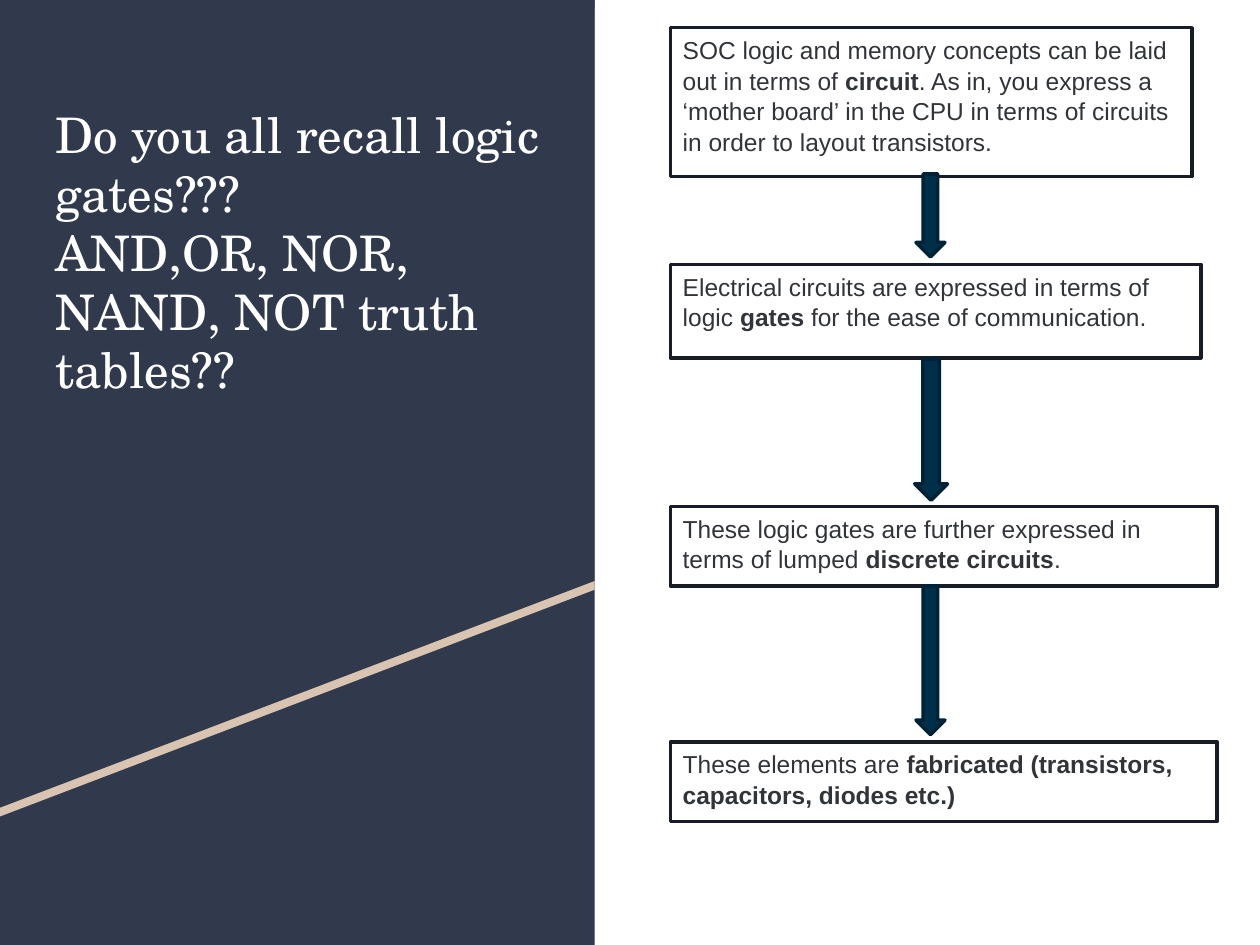
from pptx import Presentation
from pptx.dml.color import RGBColor
from pptx.enum.shapes import MSO_SHAPE as Preset
from pptx.enum.text import MSO_ANCHOR as Anchor, MSO_AUTO_SIZE as AutoSize, PP_ALIGN as Align
from pptx.util import Inches, Pt

COLORS = {
    "navy": "31394D", "sand": "D9C4B1", "white": "FFFFFF", "text": "313539",
    "border": "181C26", "arrow": "002F4A", "arrow_edge": "002236",
}


def color(name):
    return RGBColor.from_string(COLORS[name])


def paint(shape, fill, line=None):
    """Give a shape a flat fill and an optional 2 pt outline, without shadow."""
    shape.shadow.inherit = False
    shape.fill.solid()
    shape.fill.fore_color.rgb = color(fill)
    if line:
        shape.line.color.rgb = color(line)
        shape.line.width = Pt(2)
    else:
        shape.line.fill.background()


deck = Presentation()
deck.slide_width, deck.slide_height = Inches(10), Inches(7.5)
page = deck.slides.add_slide(deck.slide_layouts[5])

# Left panel with a slanted sand stripe
panel_width = 4.72
panel = page.shapes.add_shape(Preset.RECTANGLE, 0, 0, Inches(panel_width), Inches(7.5))
paint(panel, "navy")
for fill, top, right_bottom, left_bottom in [("sand", 0.07, 4.68, 6.48), ("navy", 0, 4.61, 6.41)]:
    corners = [(panel_width, top), (panel_width, right_bottom), (0, left_bottom)]
    builder = page.shapes.build_freeform(0, Inches(top))
    builder.add_line_segments([(Inches(x), Inches(y)) for x, y in corners])
    slope = builder.convert_to_shape()
    paint(slope, fill)

# Title, brought in front of the panel
title = page.shapes.title
slope._element.addnext(title._element)
title.left, title.top = Inches(0.34), Inches(0.73)
title.width, title.height = Inches(4.05), Inches(3.66)
frame = title.text_frame
frame.text = "Do you all recall logic gates???\vAND,OR, NOR, NAND, NOT truth tables??"
frame.word_wrap = True
frame.auto_size = AutoSize.NONE
frame.vertical_anchor = Anchor.TOP
frame.margin_left = frame.margin_right = frame.margin_top = frame.margin_bottom = Inches(0.1)
para = frame.paragraphs[0]
para.alignment = Align.LEFT
para.line_spacing = 1.0
para.font.name, para.font.size = "TeX Gyre Schola", Pt(28)
para.font.color.rgb = color("white")

# Steps: top, width, height, then text before, in and after the bold part
steps = [
    (0.22, 4.14, 1.18, "SOC logic and memory concepts can be laid out in terms of ", "circuit",
     ". As in, you express a ‘mother board’ in the CPU in terms of circuits "
     "in order to layout transistors."),
    (2.1, 4.21, 0.74, "Electrical circuits are expressed in terms of logic ", "gates",
     " for the ease of communication."),
    (4.02, 4.34, 0.63, "These logic gates are further expressed in terms of lumped ",
     "discrete circuits", "."),
    (5.89, 4.34, 0.63, "These elements are ",
     "fabricated (transistors, capacitors, diodes etc.)", ""),
]
for top, width, height, before, strong, after in steps:
    box = page.shapes.add_shape(
        Preset.FLOWCHART_PROCESS, Inches(5.32), Inches(top), Inches(width), Inches(height))
    paint(box, "white", "border")
    frame = box.text_frame
    frame.word_wrap = True
    frame.vertical_anchor = Anchor.TOP
    frame.margin_left = frame.margin_right = Inches(0.1)
    frame.margin_top = frame.margin_bottom = Inches(0.05)
    para = frame.paragraphs[0]
    para.alignment = Align.LEFT
    para.line_spacing = 1.04
    para.font.name, para.font.size = "Arial", Pt(14)
    para.font.color.rgb = color("text")
    for words in filter(None, (before, strong, after)):
        span = para.add_run()
        span.text = words
        if words == strong:
            span.font.bold = True

# Arrows between the steps: left, top, width, height
for place in [(7.27, 1.38, 0.23, 0.66), (7.26, 2.85, 0.26, 1.12), (7.27, 4.65, 0.23, 1.18)]:
    arrow = page.shapes.add_shape(Preset.DOWN_ARROW, *map(Inches, place))
    paint(arrow, "arrow", "arrow_edge")

deck.save("out.pptx")
